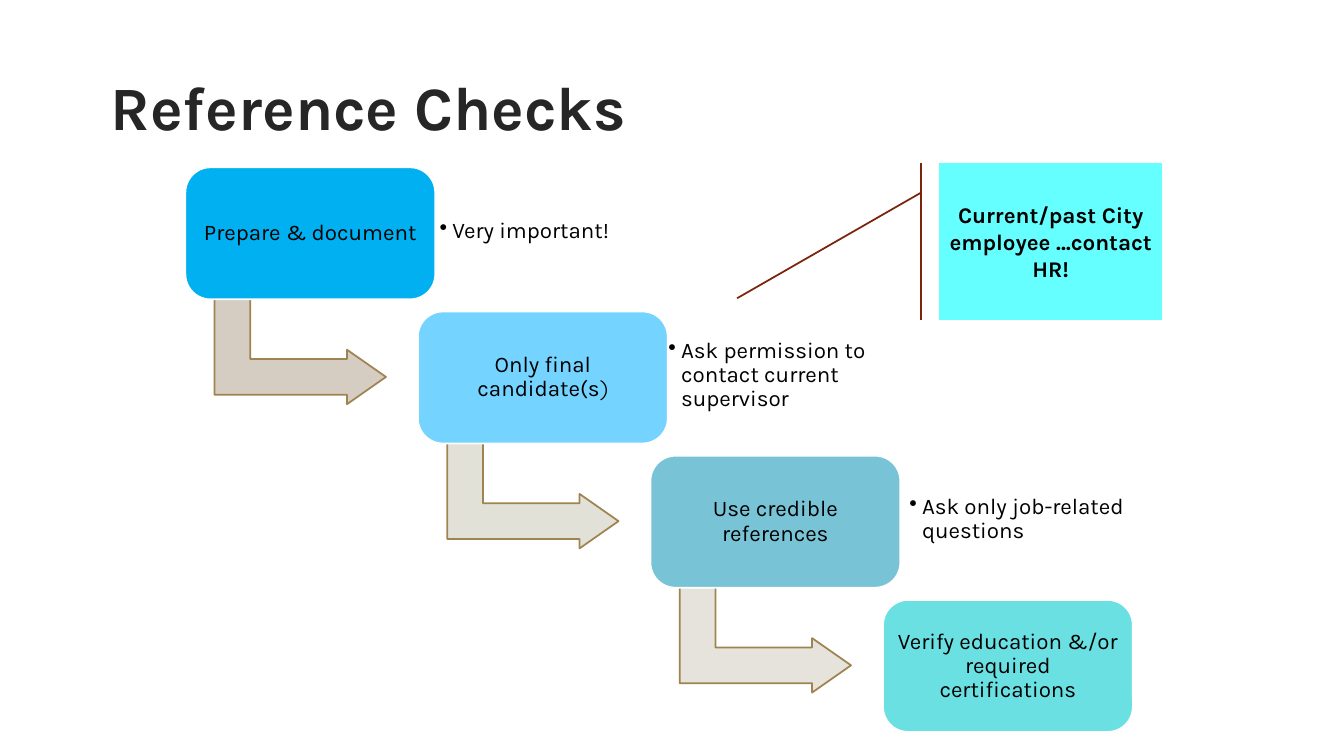
import pptx
import pptx.util
import pptx.dml.color
import pptx.enum.shapes
import pptx.enum.text
import pptx.oxml.ns
import lxml.etree

Pt = pptx.util.Pt
SHAPE = pptx.enum.shapes.MSO_SHAPE
ALIGN = pptx.enum.text.PP_ALIGN
ANCHOR = pptx.enum.text.MSO_ANCHOR

COLORS = {
    "title": "262626", "text": "000000", "white": "FFFFFF",
    "callout": "66FFFF", "callout_line": "7A240C", "arrow_line": "9F8351",
    "step1": "00B0F0", "step2": "75D4FF", "step3": "78C4D6", "step4": "6BE0E3",
    "arrow1": "D6CDC2", "arrow2": "E1E1D7", "arrow3": "E5E3DB",
}


def rgb(name):
    return pptx.dml.color.RGBColor.from_string(COLORS[name])


class Deck:
    font = "Karla"
    size = 16
    line_width = 1.25

    def __init__(self, width, height):
        self.prs = pptx.Presentation()
        self.prs.slide_width, self.prs.slide_height = Pt(width), Pt(height)
        self.s = self.prs.slides.add_slide(self.prs.slide_layouts[6])

    def add_text(self, sp, runs, inset, anchor=ANCHOR.MIDDLE,
                 align=ALIGN.CENTER, size=size, color="text", bold=False,
                 spacing=0.9):
        tf = sp.text_frame
        tf.word_wrap = True
        tf.vertical_anchor = anchor
        tf.margin_left = tf.margin_right = Pt(inset[0])
        tf.margin_top = tf.margin_bottom = Pt(inset[1])
        p = tf.paragraphs[0]
        p.alignment, p.line_spacing = align, spacing
        for text, font in runs:
            r = p.add_run()
            r.text = text
            r.font.name, r.font.size, r.font.bold = font, Pt(size), bold
            r.font.color.rgb = rgb(color)
        return p

    def shape(self, kind, box, fill, line, adjustments):
        sp = self.s.shapes.add_shape(kind, *map(Pt, box))
        sp.shadow.inherit = False
        sp.fill.solid()
        sp.fill.fore_color.rgb = rgb(fill)
        sp.line.color.rgb = rgb(line)
        sp.line.width = Pt(self.line_width)
        for i, value in enumerate(adjustments):
            sp.adjustments[i] = value
        return sp

    def title(self, text, box):
        sp = self.s.shapes.add_textbox(*map(Pt, box))
        self.add_text(sp, [(text, self.font)], (7.2, 3.6), ANCHOR.TOP,
                      ALIGN.LEFT, 44, "title", True)

    def callout(self, text, box):
        sp = self.shape(SHAPE.LINE_CALLOUT_1_ACCENT_BAR, box, "callout",
                        "callout_line", (0.188, -0.083, 0.859, -0.908))
        self.add_text(sp, [(text, self.font)], (7.2, 3.6), bold=True, spacing=1)

    def arrow(self, box, fill):
        sp = self.shape(SHAPE.BENT_UP_ARROW, box, fill, "arrow_line",
                        (0.328, 0.25, 0.358))
        sp.rotation = 90

    def step(self, runs, box, fill):
        sp = self.shape(SHAPE.ROUNDED_RECTANGLE, box, fill, "white", (0.19,))
        self.add_text(sp, runs, (3.4, 3.4))

    def note(self, text, box):
        sp = self.s.shapes.add_textbox(*map(Pt, box))
        p = self.add_text(sp, [(text, self.font)], (4.5, 4.5), align=ALIGN.LEFT)
        pPr = p._p.get_or_add_pPr()
        pPr.set("marL", str(Pt(9)))
        pPr.set("indent", str(-Pt(9)))
        bullet = lxml.etree.SubElement(pPr, pptx.oxml.ns.qn("a:buChar"))
        bullet.set("char", "•")


def main():
    deck = Deck(960, 540)

    # Callout and title
    deck.callout("Current/past City employee …contact HR!",
                 (671, 116.6, 159.1, 112.3))
    deck.title("Reference Checks", (72, 51.8, 816, 100.8))

    # Staircase: step label runs, then note text, left and width
    karla = deck.font
    steps = [
        ([("Prepare & document", karla)], ("Very important!", 309.6, 198.7)),
        ([("Only final candidate(s", karla), (")", "Quicksand")],
         ("Ask permission to contact current supervisor", 473, 185.8)),
        ([("Use credible references", karla)],
         ("Ask only job-related questions", 645.1, 210.2)),
        ([("Verify education &/or required certifications", karla)], None),
    ]
    for i, (runs, note) in enumerate(steps):
        x, y = 132.4 + 166.1 * i, 119.5 + 103 * i
        if i < len(steps) - 1:
            deck.arrow((x + 43.2, y + 69.1, 77.8, 122.4), f"arrow{i + 1}")
        deck.step(runs, (x, y, 178.5, 94.3), f"step{i + 1}")
        if note:
            text, left, width = note
            deck.note(text, (left, y + 8.6, width, 74.2))

    deck.prs.save("out.pptx")


if __name__ == "__main__":
    main()
